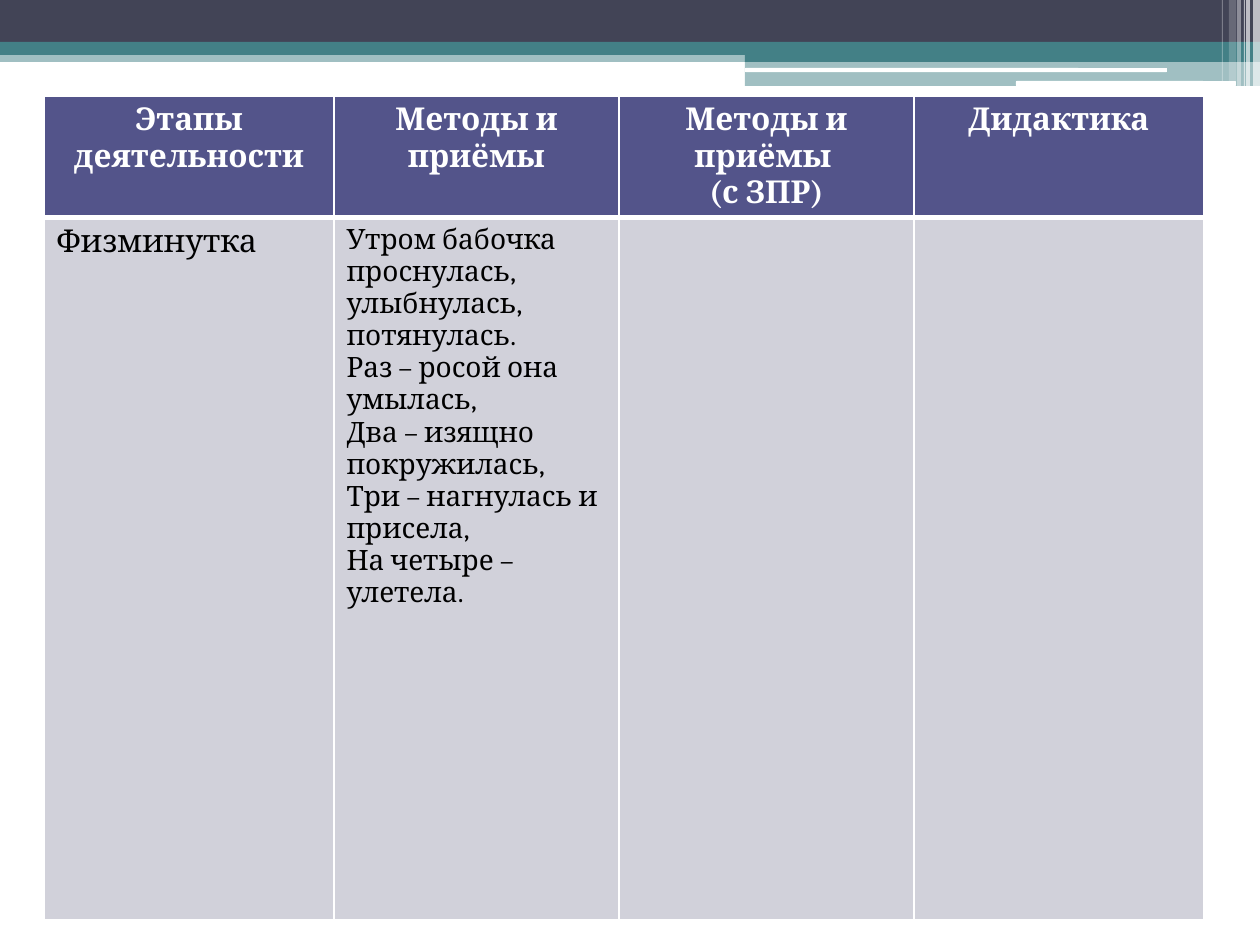
from lxml.etree import SubElement
from pptx import Presentation
from pptx.dml.color import RGBColor
from pptx.enum.shapes import MSO_SHAPE
from pptx.enum.text import PP_ALIGN
from pptx.oxml.ns import qn
from pptx.util import Pt

PX = 914400 / 126
COLORS = {
    "white": "FFFFFF", "black": "000000", "slate": "424456", "teal": "438086",
    "header": "53548A", "body": "D1D1DA",
}


def px(*lengths):
    """Turn pixel lengths into EMU."""
    return [round(length * PX) for length in lengths]


def add_border(cell, side, width):
    line = SubElement(cell._tc.get_or_add_tcPr(), qn(f"a:ln{side}"), w=str(Pt(width)))
    fill = SubElement(line, qn("a:solidFill"))
    SubElement(fill, qn("a:srgbClr"), val=COLORS["white"])


presentation = Presentation()
presentation.slide_width, presentation.slide_height = px(1260, 945)
slide = presentation.slides.add_slide(presentation.slide_layouts[6])

# Top band: left, top, width, height, colour, opacity in percent, rounded
bands = [
    (0, 50, 1260, 12, "teal", 50, False),
    (0, 0, 1260, 43, "slate", 100, False),
    (0, 42, 1260, 13, "teal", 100, False),
    (745, 49, 515, 13, "teal", 100, False),
    (745, 61, 515, 25, "teal", 50, False),
    (745, 68, 422, 4, "white", 100, True),
    (1016, 81, 220, 5, "white", 100, True),
    (1253, 0, 7, 86, "white", 65, False),
    (1246, 0, 4, 86, "white", 65, False),
    (1244, 0, 1, 86, "white", 60, False),
    (1237, 0, 4, 86, "white", 40, False),
    (1229, 0, 7, 81, "white", 20, False),
    (1222, 0, 1, 81, "white", 30, False),
]
for left, top, width, height, color, opacity, rounded in bands:
    kind = MSO_SHAPE.ROUNDED_RECTANGLE if rounded else MSO_SHAPE.RECTANGLE
    shape = slide.shapes.add_shape(kind, *px(left, top, width, height))
    shape.shadow.inherit = False
    shape.line.fill.background()
    shape.fill.solid()
    shape.fill.fore_color.rgb = RGBColor.from_string(COLORS[color])
    if opacity < 100:
        color_element = shape._element.spPr.find(f".//{qn('a:srgbClr')}")
        SubElement(color_element, qn("a:alpha"), val=str(opacity * 1000))

# Table of lesson stages
rows = [
    ["Этапы деятельности", "Методы и приёмы", "Методы и приёмы \n(с ЗПР)", "Дидактика"],
    [
        "Физминутка",
        "Утром бабочка проснулась, улыбнулась, потянулась.\n"
        "Раз – росой она умылась,\n"
        "Два – изящно покружилась,\n"
        "Три – нагнулась и присела,\n"
        "На четыре – улетела.",
        "",
        "",
    ],
]
row_formats = [
    {"fill": "header", "text": "white", "bold": True, "align": PP_ALIGN.CENTER,
     "sizes": [18, 18, 18, 18], "borders": {"L": 1, "R": 1, "T": 1, "B": 3}},
    {"fill": "body", "text": "black", "bold": False, "align": PP_ALIGN.LEFT,
     "sizes": [18, 16, 18, 18], "borders": {"L": 1, "R": 1, "T": 3, "B": 1}},
]
column_widths = px(290, 285, 295, 290)
row_heights = px(92, 702)

table = slide.shapes.add_table(
    len(rows), len(column_widths), *px(44, 96), sum(column_widths), sum(row_heights)
).table
table.first_row = table.horz_banding = False
for column, width in zip(table.columns, column_widths):
    column.width = width

for row, height, texts, row_format in zip(table.rows, row_heights, rows, row_formats):
    row.height = height
    for cell, text, size in zip(row.cells, texts, row_format["sizes"]):
        for side, width in row_format["borders"].items():
            add_border(cell, side, width)
        cell.fill.solid()
        cell.fill.fore_color.rgb = RGBColor.from_string(COLORS[row_format["fill"]])
        cell.text = text
        font_format = {"name": "Cambria", "size": Pt(size), "bold": row_format["bold"]}
        for paragraph in cell.text_frame.paragraphs:
            paragraph.alignment = row_format["align"]
            for run in paragraph.runs:
                for attribute, value in font_format.items():
                    setattr(run.font, attribute, value)
                run.font.color.rgb = RGBColor.from_string(COLORS[row_format["text"]])

presentation.save("out.pptx")
